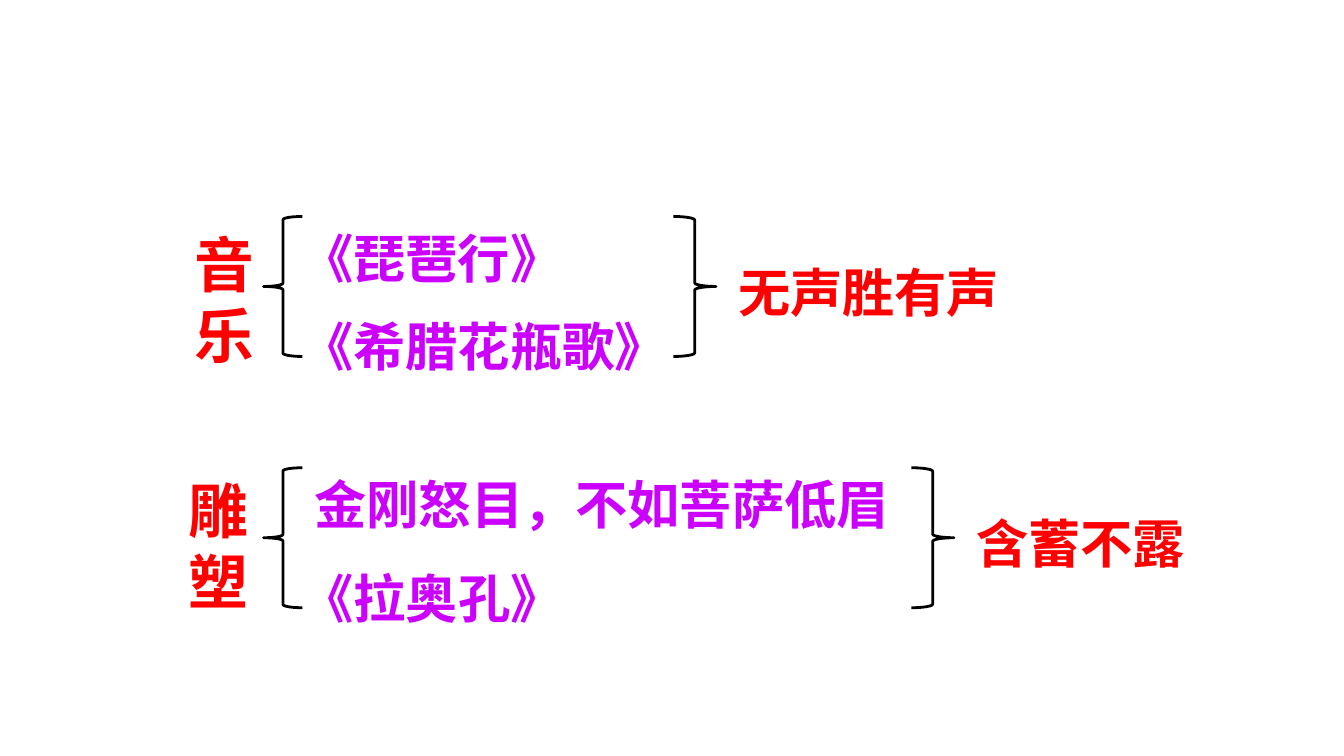
from pptx import Presentation
from pptx.dml.color import RGBColor
from pptx.enum.shapes import MSO_SHAPE as Shape
from pptx.enum.text import MSO_ANCHOR as Anchor, MSO_AUTO_SIZE as AutoSize
from pptx.oxml.ns import qn
from pptx.util import Pt

FONT = "Noto Sans CJK SC"
COLORS = {"key": "FF0000", "work": "CC00FF", "brace": "000000"}
BRACE_HEIGHT = 75


def add_text(slide, text, box, size=28, color="key", line_spacing=None,
             vertical=False, tracking=0):
    label = slide.shapes.add_textbox(*map(Pt, box))
    frame = label.text_frame
    frame.word_wrap = True
    frame.auto_size = AutoSize.SHAPE_TO_FIT_TEXT
    frame.vertical_anchor = Anchor.TOP
    if vertical:
        frame._txBody.bodyPr.set("vert", "eaVert")
    paragraph = frame.paragraphs[0]
    if line_spacing:
        paragraph.line_spacing = line_spacing
    run = paragraph.add_run()
    run.text = text
    font = run.font
    font.name, font.size, font.bold = FONT, Pt(size), True
    font.color.rgb = RGBColor.from_string(COLORS[color])
    # East Asian typeface and letter spacing
    properties = run._r.get_or_add_rPr()
    east_asian = properties.makeelement(qn("a:ea"), {"typeface": FONT})
    properties.find(qn("a:latin")).addnext(east_asian)
    if tracking:
        properties.set("spc", str(tracking * 100))


def add_brace(slide, kind, left, top, width):
    brace = slide.shapes.add_shape(
        kind, Pt(left), Pt(top), Pt(width), Pt(BRACE_HEIGHT))
    brace.shadow.inherit = False
    brace.fill.background()
    brace.line.color.rgb = RGBColor.from_string(COLORS["brace"])
    brace.line.width = Pt(1.5)


def add_art_group(slide, box, art, art_offset, works, conclusion, conclusion_width):
    """Art form, its example works between braces, and the conclusion."""
    left, top, width, height = box
    middle = top + height / 2
    conclusion_left = left + width - conclusion_width

    # Art form, written vertically
    dx, dy = art_offset
    add_text(slide, art, (left + dx, top + dy, 53.3, 102.2), size=32,
             vertical=True, tracking=6)
    add_brace(slide, Shape.LEFT_BRACE, left + 56, top, 20.8)

    # Example works
    for work, dx, dy, work_width in works:
        add_text(slide, work, (left + dx, top + dy, work_width, 58.3),
                 color="work", line_spacing=1.5)

    # Conclusion
    add_brace(slide, Shape.RIGHT_BRACE, conclusion_left - 27.6, top, 22.8)
    add_text(slide, conclusion,
             (conclusion_left, middle - 17.6, conclusion_width, 41))


def main():
    deck = Presentation()
    deck.slide_width, deck.slide_height = Pt(720), Pt(405)
    slide = deck.slides.add_slide(deck.slide_layouts[6])

    # Music
    add_art_group(
        slide, (85.2, 116, 491, BRACE_HEIGHT), "音乐", (3.4, 2.8),
        [("《琵琶行》", 69.2, -15.2, 202), ("《希腊花瓶歌》", 69.2, 32.2, 252)],
        "无声胜有声", 187.8)

    # Sculpture
    add_art_group(
        slide, (85.2, 250.6, 569.5, BRACE_HEIGHT), "雕塑", (0, 0),
        [("金刚怒目，不如菩萨低眉", 76.2, -18.2, 367), ("《拉奥孔》", 69.2, 32.2, 367)],
        "含蓄不露", 138.8)

    deck.save("out.pptx")


if __name__ == "__main__":
    main()
